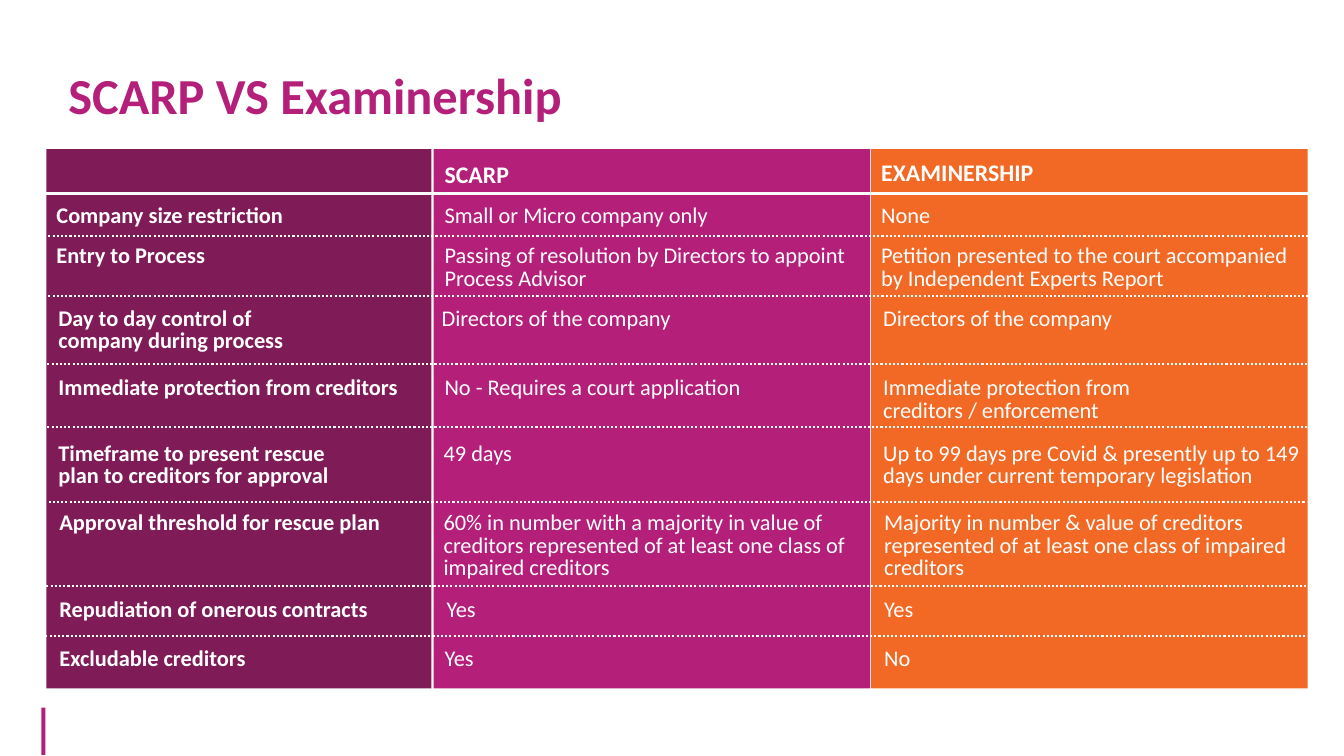
from lxml import etree
from pptx import Presentation
from pptx.dml.color import RGBColor
from pptx.enum.dml import MSO_LINE
from pptx.enum.shapes import MSO_CONNECTOR, MSO_SHAPE
from pptx.enum.text import MSO_ANCHOR
from pptx.oxml.ns import qn
from pptx.util import Inches, Pt

RECTANGLE = MSO_SHAPE.RECTANGLE
STRAIGHT = MSO_CONNECTOR.STRAIGHT
DOTTED = MSO_LINE.ROUND_DOT
TOP = MSO_ANCHOR.TOP
PLAIN_TABLE_STYLE = "{2D5ABB26-0587-4C30-8999-92F81FD0307C}"

COLORS = {"plum": "7F1C58", "magenta": "B41F7A", "orange": "F16924", "white": "FFFFFF"}
FONT = "Calibri"

# Coloured panels behind the columns: left, width, colour
PANELS = [(8.64, 4.33, "orange"), (4.3, 4.33, "magenta"), (0.46, 3.82, "plum")]

# Column edges and right text margins, in inches
COLUMN_EDGES = [0.46, 4.29, 8.63, 12.97]
COLUMN_RIGHT_MARGINS = [0.05, 0.2, 0.05]

# Row edges, top text margins and left text margins by column, in inches
ROW_EDGES = [1.48, 1.92, 2.34, 2.94, 3.61, 4.24, 4.98, 5.81, 6.31, 6.83]
ROW_MARGINS = [0.1, 0.13, 0.11, 0.13, 0.15, 0.17, 0.12, 0.15, 0.14]
LEFT_MARGINS = [
    (0.1, 0.12, 0.11), (0.1, 0.12, 0.11), (0.1, 0.12, 0.11),
    (0.12, 0.09, 0.13), (0.12, 0.12, 0.13), (0.12, 0.11, 0.13),
    (0.13, 0.11, 0.14), (0.13, 0.14, 0.14), (0.13, 0.12, 0.14),
]

# Horizontal extent of the dotted rule under each body row but the last
RULE_EXTENTS = [(0.48, 12.97), (0.48, 12.97), (0.47, 12.96), (0.47, 12.96),
                (0.44, 12.94), (0.46, 12.95), (0.45, 12.94)]

COMPARISON = [
    ("", "SCARP", "EXAMINERSHIP"),
    ("Company size restriction", "Small or Micro company only", "None"),
    ("Entry to Process",
     "Passing of resolution by Directors to appoint Process Advisor",
     "Petition presented to the court accompanied by Independent Experts Report"),
    ("Day to day control of\ncompany during process",
     "Directors of the company", "Directors of the company"),
    ("Immediate protection from creditors", "No - Requires a court application",
     "Immediate protection from\ncreditors / enforcement"),
    ("Timeframe to present rescue\nplan to creditors for approval", "49 days",
     "Up to 99 days pre Covid & presently up to 149 days under current temporary legislation"),
    ("Approval threshold for rescue plan",
     "60% in number with a majority in value of creditors represented of at least "
     "one class of impaired creditors",
     "Majority in number & value of creditors represented of at least "
     "one class of impaired\ncreditors"),
    ("Repudiation of onerous contracts", "Yes", "Yes"),
    ("Excludable creditors", "Yes", "No"),
]


def rgb(name):
    return RGBColor.from_string(COLORS[name])


class SlideBuilder:
    def __init__(self, slide):
        self.slide = slide

    def style(self, paragraph, size, color, bold):
        font = paragraph.font
        font.name, font.size, font.bold = FONT, Pt(size), bold
        font.color.rgb = rgb(color)

    def title(self, text, left, top, width, height):
        box = self.slide.shapes.add_textbox(
            Inches(left), Inches(top), Inches(width), Inches(height))
        box.text_frame.word_wrap = True
        paragraph = box.text_frame.paragraphs[0]
        paragraph.text = text
        paragraph.line_spacing = 0.8
        self.style(paragraph, 36, "magenta", True)

    def panel(self, left, top, width, height, color):
        panel = self.slide.shapes.add_shape(
            RECTANGLE, Inches(left), Inches(top), Inches(width), Inches(height))
        panel.shadow.inherit = False
        panel.fill.solid()
        panel.fill.fore_color.rgb = rgb(color)
        panel.line.fill.background()

    def rule(self, start, end, y, width, dash=None):
        rule = self.slide.shapes.add_connector(
            STRAIGHT, Inches(start), Inches(y), Inches(end), Inches(y))
        rule.line.color.rgb = rgb("white")
        rule.line.width = Pt(width)
        if dash is not None:
            rule.line.dash_style = dash
        etree.SubElement(rule._element.spPr, qn("a:effectLst"))

    def cell(self, cell, text, row, column):
        header = row == 0
        cell.fill.background()
        cell.vertical_anchor = TOP
        cell.margin_left = Inches(LEFT_MARGINS[row][column])
        cell.margin_right = Inches(COLUMN_RIGHT_MARGINS[column])
        # The middle heading sits slightly lower than its neighbour
        lowered = 0.02 if header and column == 1 else 0
        cell.margin_top = Inches(ROW_MARGINS[row] + lowered)
        cell.margin_bottom = 0
        cell.text_frame.text = text
        for paragraph in cell.text_frame.paragraphs:
            self.style(paragraph, 17 if header else 16, "white", header or column == 0)
            if not header:
                paragraph.line_spacing = Pt(16.2)

    def comparison_table(self, rows):
        left, top = COLUMN_EDGES[0], ROW_EDGES[0]
        table = self.slide.shapes.add_table(
            len(rows), len(rows[0]), Inches(left), Inches(top),
            Inches(COLUMN_EDGES[-1] - left), Inches(ROW_EDGES[-1] - top)).table
        table.first_row = table.horz_banding = False
        table._tbl.tblPr.find(qn("a:tableStyleId")).text = PLAIN_TABLE_STYLE
        for tracks, attribute, edges in ((table.columns, "width", COLUMN_EDGES),
                                         (table.rows, "height", ROW_EDGES)):
            for track, start, end in zip(tracks, edges, edges[1:]):
                setattr(track, attribute, Inches(end - start))
        for row, texts in enumerate(rows):
            for column, text in enumerate(texts):
                self.cell(table.cell(row, column), text, row, column)


def main():
    presentation = Presentation()
    presentation.slide_width, presentation.slide_height = Inches(13.33), Inches(7.5)
    builder = SlideBuilder(presentation.slides.add_slide(presentation.slide_layouts[6]))

    # Accent at the foot of the slide and heading
    builder.panel(0.41, 7.02, 0.04, 0.47, "magenta")
    builder.title("SCARP VS Examinership", 0.58, 0.7, 8.8, 0.64)

    # Column panels
    for left, width, color in PANELS:
        builder.panel(left, ROW_EDGES[0], width, ROW_EDGES[-1] - ROW_EDGES[0], color)

    # Comparison text
    builder.comparison_table(COMPARISON)

    # Solid rule under the header, dotted rules between the body rows
    builder.rule(0.39, 12.97, ROW_EDGES[1], 2.25)
    for (start, end), y in zip(RULE_EXTENTS, ROW_EDGES[2:]):
        builder.rule(start, end, y, 1.5, DOTTED)

    presentation.save("out.pptx")


if __name__ == "__main__":
    main()
